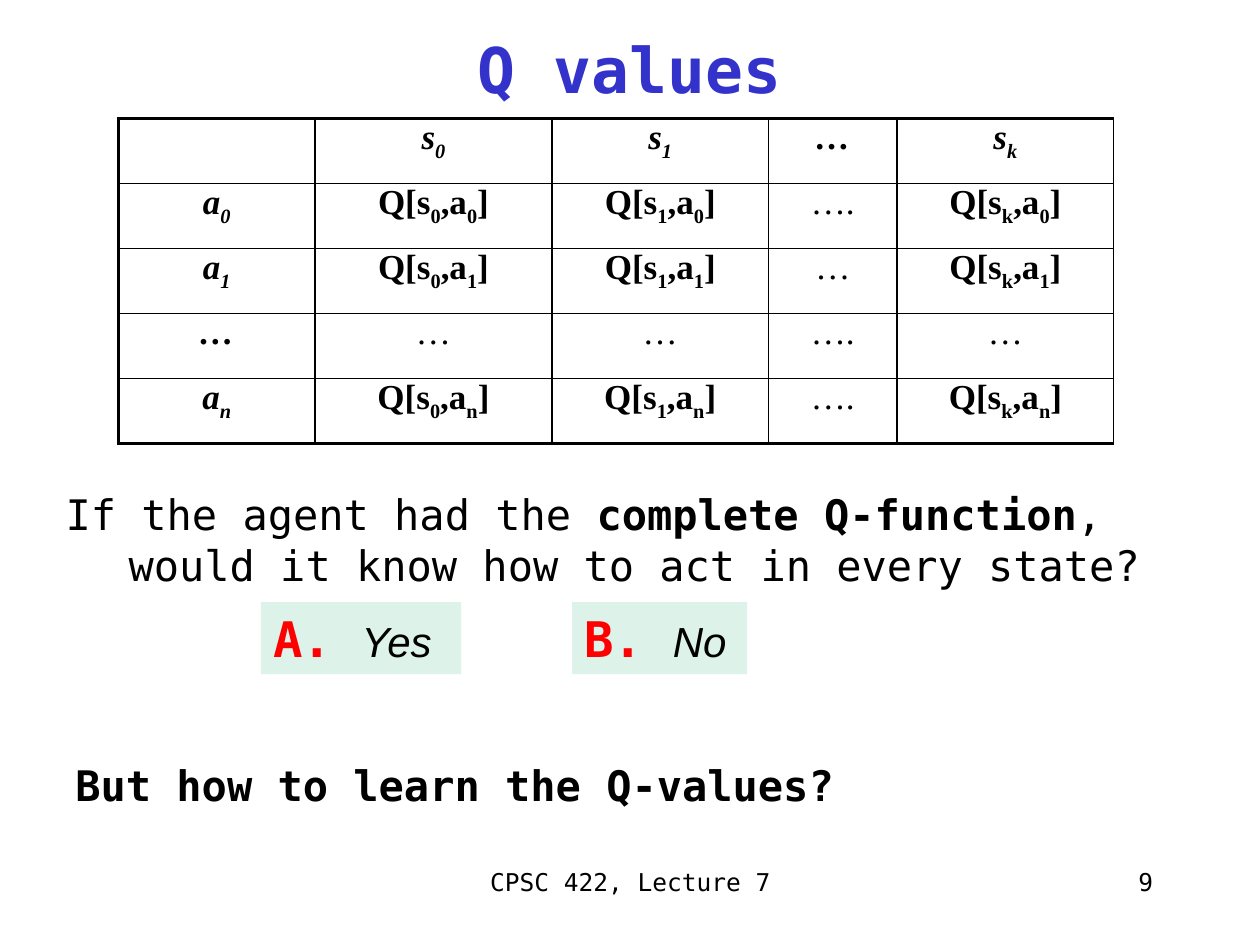
from dataclasses import dataclass

from lxml.etree import SubElement
from pptx import Presentation
from pptx.dml.color import RGBColor
from pptx.enum.shapes import MSO_SHAPE
from pptx.enum.text import MSO_ANCHOR, MSO_AUTO_SIZE, PP_ALIGN
from pptx.oxml.ns import qn
from pptx.util import Inches, Pt


@dataclass(frozen=True)
class Theme:
    mono: str = "DejaVu Sans Mono"
    serif: str = "Times New Roman"
    sans: str = "Arial"
    ink: str = "000000"
    heading: str = "3333CC"
    letter: str = "FF0000"
    answer_fill: str = "DDF3EA"
    title_size: int = 36
    letter_size: int = 28
    body_size: int = 24
    cell_size: int = 20
    footer_size: int = 14
    thick: float = 2.25
    thin: float = 1


def set_values(target, values):
    for name, value in values.items():
        setattr(target, name, value)


def place(shape, box):
    names = ("left", "top", "width", "height")
    set_values(shape, dict(zip(names, map(Inches, box))))


class SlideBuilder:
    def __init__(self, slide, theme):
        self.slide = slide
        self.theme = theme

    def add_run(self, paragraph, text, color=None, **values):
        run = paragraph.add_run()
        run.text = text
        defaults = {"name": self.theme.mono, "size": self.theme.body_size,
                    "bold": False, "italic": False}
        values = defaults | values
        values["size"] = Pt(values["size"])
        set_values(run.font, values)
        run.font.color.rgb = RGBColor.from_string(color or self.theme.ink)
        return run

    def set_hanging(self, paragraph):
        properties = paragraph._p.get_or_add_pPr()
        properties.set("marL", str(Inches(0.5)))
        properties.set("indent", str(Inches(-0.5)))
        spacing = SubElement(properties, qn("a:spcBef"))
        SubElement(spacing, qn("a:spcPct")).set("val", "20000")
        SubElement(properties, qn("a:buNone"))

    def add_title(self, text, box):
        title = self.slide.shapes.title
        place(title, box)
        title.text_frame.vertical_anchor = MSO_ANCHOR.MIDDLE
        paragraph = title.text_frame.paragraphs[0]
        paragraph.alignment = PP_ALIGN.CENTER
        self.add_run(paragraph, text, self.theme.heading,
                     size=self.theme.title_size, bold=True)

    def add_body(self, pieces, box):
        body = self.slide.placeholders[1]
        place(body, box)
        body.text_frame.auto_size = MSO_AUTO_SIZE.NONE
        paragraph = body.text_frame.paragraphs[0]
        self.set_hanging(paragraph)
        for text, bold in pieces:
            self.add_run(paragraph, text, bold=bold)

    def add_text(self, text, box, alignment=PP_ALIGN.LEFT, hanging=False,
                 margin_top=0.05, **values):
        frame = self.slide.shapes.add_textbox(*map(Inches, box)).text_frame
        set_values(frame, {"word_wrap": True, "margin_top": Inches(margin_top)})
        paragraph = frame.paragraphs[0]
        paragraph.alignment = alignment
        if hanging:
            self.set_hanging(paragraph)
        self.add_run(paragraph, text, **values)

    def add_answer(self, letter, answer, box):
        shape = self.slide.shapes.add_shape(MSO_SHAPE.RECTANGLE, *map(Inches, box))
        shape.shadow.inherit = False
        shape.fill.solid()
        shape.fill.fore_color.rgb = RGBColor.from_string(self.theme.answer_fill)
        shape.line.fill.background()
        set_values(shape.text_frame, {"word_wrap": True,
                                      "vertical_anchor": MSO_ANCHOR.TOP})
        paragraph = shape.text_frame.paragraphs[0]
        paragraph.alignment = PP_ALIGN.LEFT
        self.add_run(paragraph, f"{letter}. ", self.theme.letter,
                     size=self.theme.letter_size, bold=True)
        self.add_run(paragraph, answer, name=self.theme.sans, italic=True)

    def set_borders(self, cell, thick_sides):
        properties = cell._tc.get_or_add_tcPr()
        for index, side in enumerate("LRTB"):
            width = self.theme.thick if side in thick_sides else self.theme.thin
            line = properties.makeelement(qn(f"a:ln{side}"), {"w": str(Pt(width))})
            fill = SubElement(line, qn("a:solidFill"))
            SubElement(fill, qn("a:srgbClr")).set("val", self.theme.ink)
            properties.insert(index, line)

    def fill_cell(self, cell, text, bold, italic):
        cell.fill.background()
        set_values(cell, {"margin_top": 0, "margin_bottom": 0})
        paragraph = cell.text_frame.paragraphs[0]
        set_values(paragraph, {"alignment": PP_ALIGN.CENTER, "space_before": Pt(18)})
        values = {"name": self.theme.serif, "size": self.theme.cell_size,
                  "bold": bold, "italic": italic}
        first, *rest = text.split("_")
        if first:
            self.add_run(paragraph, first, **values)
        for part in rest:
            subscript = self.add_run(paragraph, part[0], **values)
            subscript._r.get_or_add_rPr().set("baseline", "-25000")
            if part[1:]:
                self.add_run(paragraph, part[1:], **values)

    def add_table(self, rows, widths, box):
        frame = self.slide.shapes.add_table(len(rows), len(widths), *map(Inches, box))
        table = frame.table
        set_values(table, {"first_row": False, "horz_banding": False})
        for column, width in zip(table.columns, widths):
            column.width = Inches(width)
        for row_index, row in enumerate(rows):
            table.rows[row_index].height = Inches(box[3] / len(rows))
            for column_index, text in enumerate(row):
                cell = table.cell(row_index, column_index)
                header = row_index == 0 or column_index == 0
                self.fill_cell(cell, text, header or "Q" in text, header)
                edges = {"L": column_index == 0, "T": row_index == 0,
                         "B": row_index == len(rows) - 1}
                self.set_borders(cell, [side for side, edge in edges.items() if edge])


def q_table_rows():
    states = ("0", "1", "k")
    rows = [["", "s_0", "s_1", "…", "s_k"]]
    for action, dots in (("0", "…."), ("1", "…"), ("n", "….")):
        values = [f"Q[s_{state},a_{action}]" for state in states]
        rows.append([f"a_{action}", *values[:2], dots, values[2]])
    rows.insert(3, ["…", "…", "…", "….", "…"])
    return rows


def main():
    presentation = Presentation()
    set_values(presentation, {"slide_width": Inches(10), "slide_height": Inches(7.5)})
    theme = Theme()
    slide = presentation.slides.add_slide(presentation.slide_layouts[1])
    builder = SlideBuilder(slide, theme)

    builder.add_title("Q values", (0.33, 0.17, 9.33, 0.75))
    builder.add_body([("If the agent had the ", False),
                      ("complete Q-function", True),
                      (", would it know how to act in every state?", False)],
                     (0.42, 3.83, 9.37, 1.58))
    builder.add_table(q_table_rows(), (1.56, 1.88, 1.72, 1.02, 1.72),
                      (0.94, 0.94, 7.89, 2.58))
    builder.add_text("9", (7.17, 6.83, 2.08, 0.5), PP_ALIGN.RIGHT,
                     size=theme.footer_size)
    builder.add_text("CPSC 422, Lecture 7", (3.42, 6.83, 3.17, 0.5),
                     PP_ALIGN.CENTER, size=theme.footer_size)
    for letter, answer, left, width in (("A", "Yes", 2.07, 1.59),
                                        ("B", "No", 4.54, 1.39)):
        builder.add_answer(letter, answer, (left, 4.78, width, 0.57))
    builder.add_text("But how to learn the Q-values?", (0.5, 5.5, 9.34, 1.26),
                     hanging=True, margin_top=0.53, bold=True)
    presentation.save("out.pptx")


if __name__ == "__main__":
    main()
